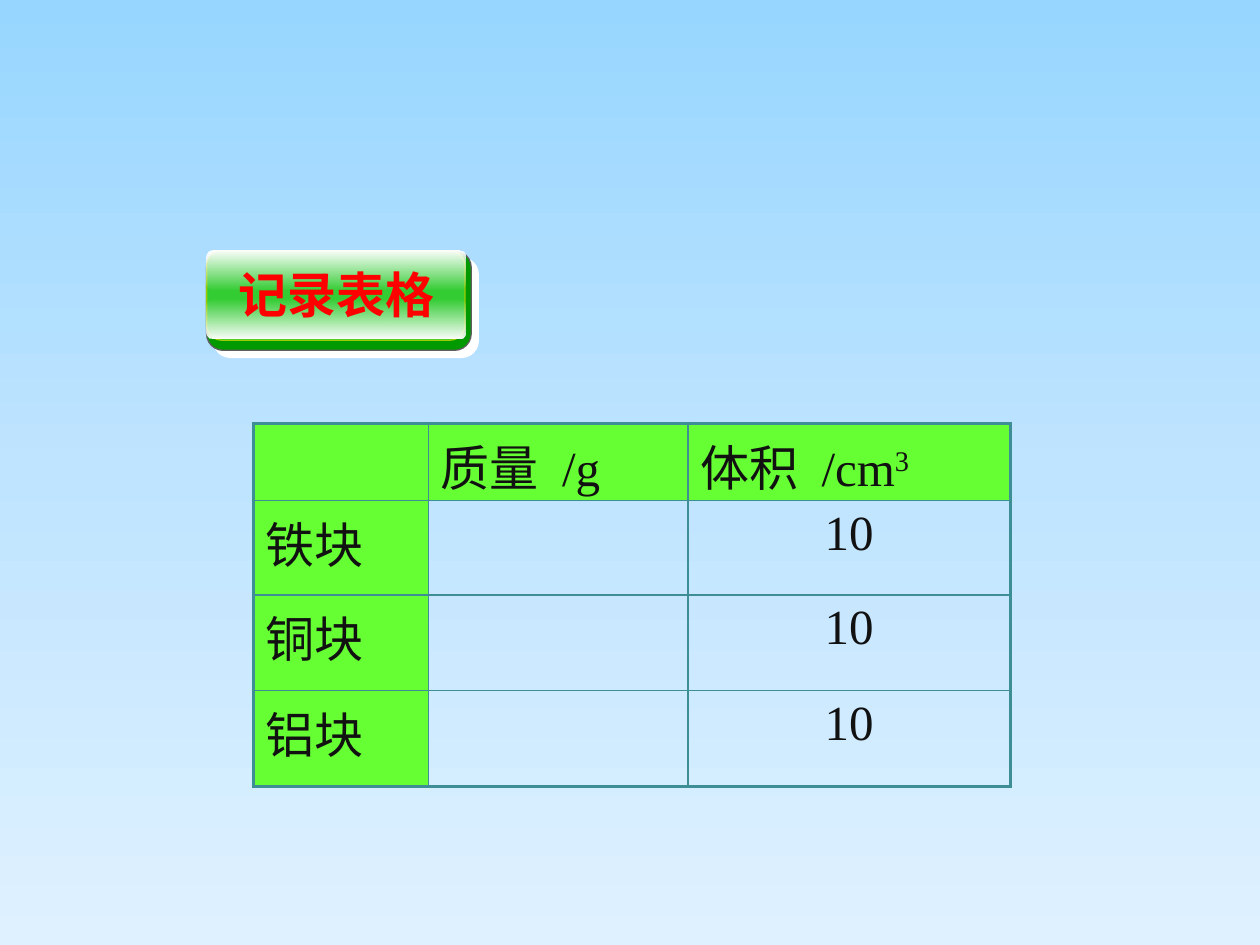
from dataclasses import dataclass
from typing import Optional

import lxml.etree
import pptx
import pptx.dml.color
import pptx.enum.shapes
import pptx.enum.text
import pptx.oxml
import pptx.oxml.ns
import pptx.util

RGBColor = pptx.dml.color.RGBColor
SKY_TOP = RGBColor(0x97, 0xD6, 0xFF)
SKY_MIDDLE = RGBColor(0xBF, 0xE4, 0xFF)
SKY_BOTTOM = RGBColor(0xDF, 0xF1, 0xFF)
TEAL = RGBColor(0x3D, 0x8F, 0x95)
LIME = RGBColor(0x66, 0xFF, 0x33)
INK = RGBColor(0x11, 0x11, 0x11)
RED = RGBColor(0xFF, 0x00, 0x00)
WHITE = RGBColor(0xFF, 0xFF, 0xFF)
DARK_GREEN = RGBColor(0x00, 0x99, 0x00)
GREEN = RGBColor(0x33, 0xCC, 0x33)
OLIVE = RGBColor(0x99, 0xCC, 0x00)
GREY = RGBColor(0x5F, 0x5F, 0x5F)

SERIF = "Times New Roman"
CHINESE = "Noto Sans CJK SC"
TEXT_SIZE = 28
GRID_COLUMNS, GRID_ROWS = 1000, 750
PAGE_WIDTH, PAGE_HEIGHT = pptx.util.Inches(10), pptx.util.Inches(7.5)


@dataclass(frozen=True)
class Frame:
    column: int
    row: int
    columns: int
    rows: int

    def place(self) -> tuple[int, int, int, int]:
        return (across(self.column), down(self.row),
                across(self.columns), down(self.rows))


@dataclass(frozen=True)
class Plate:
    frame: Frame
    fill: Optional[RGBColor] = None
    line: Optional[RGBColor] = None
    rotation: int = 0


@dataclass(frozen=True)
class Stop:
    position: int
    color: RGBColor
    alpha: int = 100


@dataclass(frozen=True)
class Span:
    text: str
    font: str = SERIF
    raised: bool = False
    spacing: int = 0


BUTTON_PLATES = [
    Plate(Frame(164, 199, 210, 79), DARK_GREEN, GREY),
    Plate(Frame(164, 199, 205, 71), GREEN, OLIVE),
    Plate(Frame(164, 238, 205, 31), rotation=180),
    Plate(Frame(164, 199, 205, 31)),
]
TITLE_FRAME = Frame(149, 205, 236, 57)
TABLE_FRAME = Frame(201, 336, 601, 285)
COLUMN_WIDTHS = [139, 206, 256]
ROW_HEIGHTS = [58, 75, 76, 76]
GAP = Span(" ", spacing=700)
HEADERS = [
    [],
    [Span("质量"), GAP, Span("/g")],
    [Span("体积"), GAP, Span("/cm"), Span("3", raised=True)],
]
RECORDS = [[[Span(metal, CHINESE)], [], [Span("10")]]
           for metal in ("铁块", "铜块", "铝块")]


def across(columns: int) -> int:
    return PAGE_WIDTH * columns // GRID_COLUMNS


def down(rows: int) -> int:
    return PAGE_HEIGHT * rows // GRID_ROWS


def add_child(parent, tag: str, **attributes):
    child = lxml.etree.SubElement(parent, pptx.oxml.ns.qn(tag))
    for name, value in attributes.items():
        child.set(name, str(value))
    return child


def add_color(parent, color: RGBColor, alpha: int = 100) -> None:
    node = add_child(parent, "a:srgbClr", val=color)
    if alpha < 100:
        add_child(node, "a:alpha", val=alpha * 1000)


def set_gradient(fill, owner, stops: list[Stop]) -> None:
    fill.gradient()
    fill.gradient_angle = 270
    stop_list = owner.find(".//" + pptx.oxml.ns.qn("a:gsLst"))
    for old in list(stop_list):
        stop_list.remove(old)
    for stop in stops:
        node = add_child(stop_list, "a:gs", pos=stop.position * 1000)
        add_color(node, stop.color, stop.alpha)


def add_span(para, span: Span, color: RGBColor, bold: bool = False) -> None:
    run = para.add_run()
    run.text = span.text
    run.font.size = pptx.util.Pt(TEXT_SIZE)
    run.font.bold = bold
    run.font.color.rgb = color
    run.font.name = span.font
    properties = run.font.color and run._r.get_or_add_rPr()
    add_child(properties, "a:ea", typeface=CHINESE)
    if span.raised:
        properties.set("baseline", "30000")
    if span.spacing:
        properties.set("spc", str(span.spacing))


def add_plate(page, plate: Plate):
    shape = page.shapes.add_shape(
        pptx.enum.shapes.MSO_SHAPE.ROUNDED_RECTANGLE, *plate.frame.place())
    shape.shadow.inherit = False
    shape.rotation = plate.rotation
    if plate.fill is None:
        set_gradient(shape.fill, shape.element,
                     [Stop(0, WHITE), Stop(100, WHITE, 0)])
    else:
        shape.fill.solid()
        shape.fill.fore_color.rgb = plate.fill
    if plate.line is None:
        shape.line.fill.background()
    else:
        shape.line.color.rgb = plate.line
        shape.line.width = pptx.util.Pt(0.75)
    return shape


def add_shadow(shape) -> None:
    effects = shape.element.spPr.find(pptx.oxml.ns.qn("a:effectLst"))
    shadow = add_child(effects, "a:outerShdw", dist=pptx.util.Pt(5.7),
                       dir=45 * 60000, algn="ctr", rotWithShape=0)
    add_color(shadow, WHITE)


def add_border(cell, side: str, outer: bool) -> None:
    width = pptx.util.Pt(2.25 if outer else 1)
    line = add_child(cell._tc.get_or_add_tcPr(), "a:ln" + side, w=width)
    add_color(add_child(line, "a:solidFill"), TEAL)


def add_record_table(page) -> None:
    contents = [HEADERS, *RECORDS]
    last_row, last_column = len(ROW_HEIGHTS) - 1, len(COLUMN_WIDTHS) - 1
    table = page.shapes.add_table(
        len(ROW_HEIGHTS), len(COLUMN_WIDTHS), *TABLE_FRAME.place()).table
    table.first_row = table.horz_banding = False
    for column, width in zip(table.columns, COLUMN_WIDTHS):
        column.width = across(width)
    for row, height in zip(table.rows, ROW_HEIGHTS):
        row.height = down(height)
    for r, record in enumerate(contents):
        for c, spans in enumerate(record):
            cell = table.cell(r, c)
            for side, outer in (("L", c == 0), ("R", c == last_column),
                                ("T", r == 0), ("B", r == last_row)):
                add_border(cell, side, outer)
            if r == 0 or c == 0:
                cell.fill.solid()
                cell.fill.fore_color.rgb = LIME
            else:
                cell.fill.background()
            if r == 0:
                cell.margin_bottom = 0
            para = cell.text_frame.paragraphs[0]
            if r > 0 and c == last_column:
                para.alignment = pptx.enum.text.PP_ALIGN.CENTER
            for span in spans:
                add_span(para, span, INK)


def add_title(page) -> None:
    box = page.shapes.title
    box.left, box.top, box.width, box.height = TITLE_FRAME.place()
    frame = box.text_frame
    frame.word_wrap = True
    frame.auto_size = pptx.enum.text.MSO_AUTO_SIZE.NONE
    frame.vertical_anchor = pptx.enum.text.MSO_ANCHOR.MIDDLE
    para = frame.paragraphs[0]
    para.alignment = pptx.enum.text.PP_ALIGN.CENTER
    add_span(para, Span("记录表格", "Arial"), RED, bold=True)
    box.element.getparent().append(box.element)


def main() -> None:
    deck = pptx.Presentation()
    deck.slide_width, deck.slide_height = PAGE_WIDTH, PAGE_HEIGHT
    page = deck.slides.add_slide(deck.slide_layouts[5])
    set_gradient(page.background.fill, page.element,
                 [Stop(0, SKY_TOP), Stop(50, SKY_MIDDLE), Stop(100, SKY_BOTTOM)])
    add_record_table(page)
    plates = [add_plate(page, plate) for plate in BUTTON_PLATES]
    add_shadow(plates[0])
    add_title(page)
    deck.save("out.pptx")


if __name__ == "__main__":
    main()
